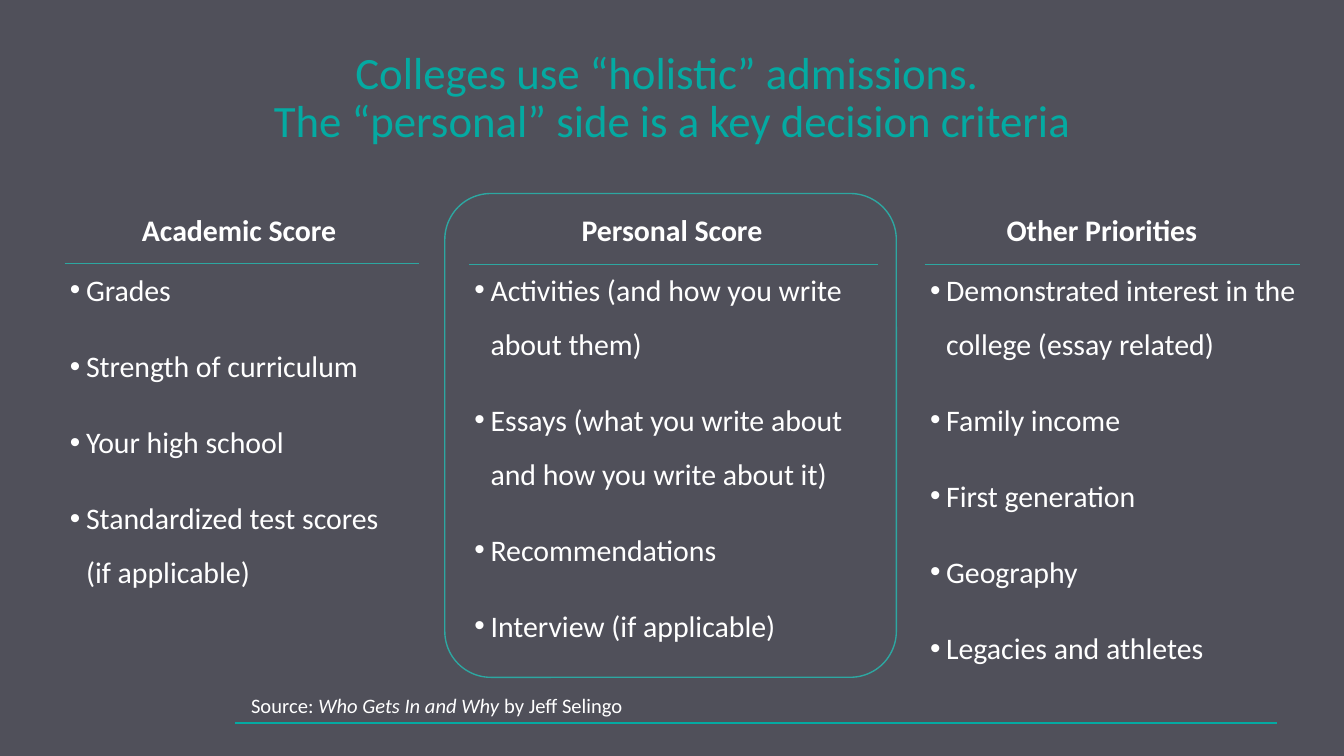
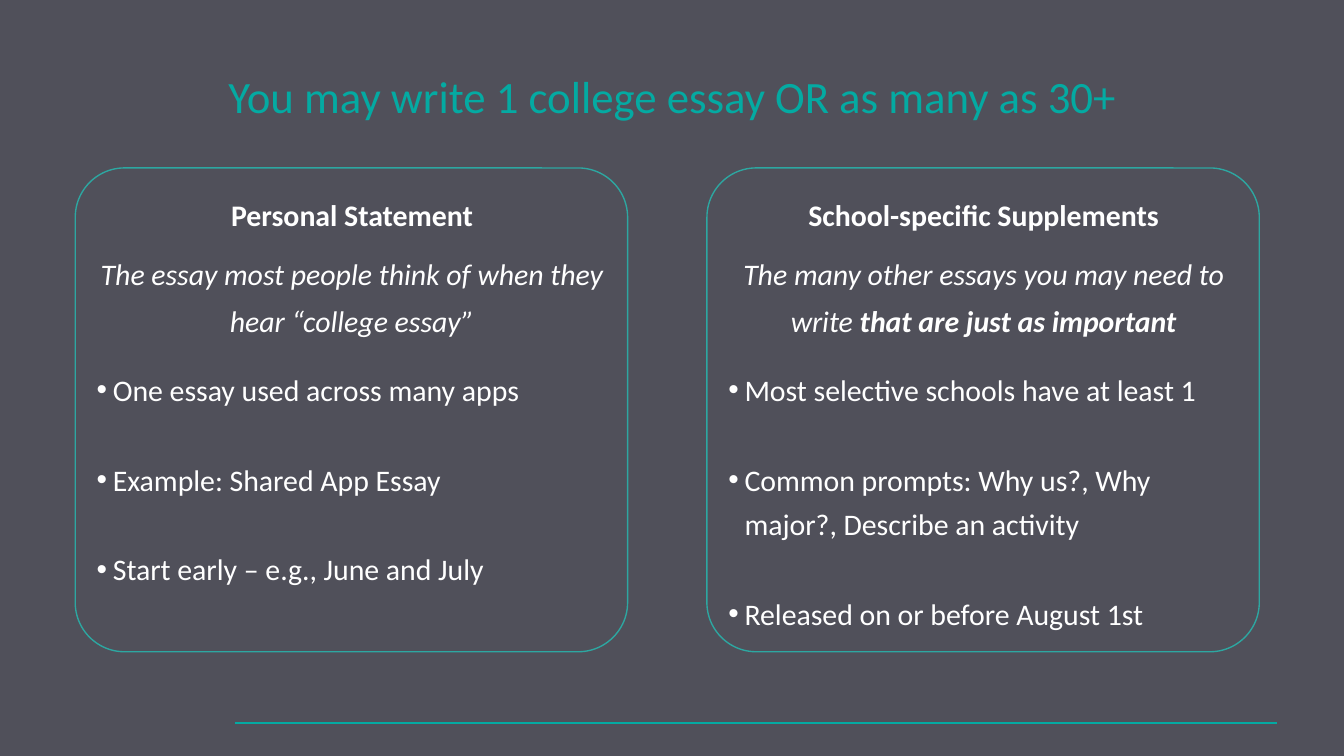
from lxml.etree import SubElement
from pptx import Presentation
from pptx.dml.color import RGBColor
from pptx.enum.shapes import MSO_CONNECTOR as Connector, MSO_SHAPE as Shape
from pptx.enum.text import MSO_ANCHOR as Anchor, MSO_AUTO_SIZE as AutoSize, PP_ALIGN as Align
from pptx.oxml.ns import qn
from pptx.util import Inches, Pt

COLORS = {"ground": "50505A", "title": "04AAA2", "accent": "2DA7A1", "text": "FFFFFF"}
FONT = "Calibri"
INDENT = 0.12

BODY = {"size": Pt(16)}
BOLD = {"size": Pt(16), "bold": True}
ITALIC = {"size": Pt(16), "italic": True}
BOLD_ITALIC = {"size": Pt(16), "bold": True, "italic": True}
SOURCE = {"size": Pt(11)}
SOURCE_ITALIC = {"size": Pt(11), "italic": True}

TITLE_PARA = {"alignment": Align.CENTER, "line_spacing": 0.9}
HEADING_PARA = {"alignment": Align.CENTER, "line_spacing": 1.5}
INTRO_PARA = {"alignment": Align.CENTER, "line_spacing": 1.3}
COLUMN_PARA = {"alignment": Align.LEFT, "line_spacing": 1.5}
CARD_PARA = {"alignment": Align.LEFT, "line_spacing": 1.25}


def rgb(name):
    return RGBColor.from_string(COLORS[name])


def apply(target, values):
    for name, value in values.items():
        setattr(target, name, value)


def style_span(span, values, color="text"):
    apply(span.font, {"name": FONT, **values})
    span.font.color.rgb = rgb(color)


def style_frame(frame, inset, anchor=Anchor.TOP):
    margins = {f"margin_{side}": Inches(inset) for side in ("left", "top", "right", "bottom")}
    apply(frame, {"word_wrap": True, "auto_size": AutoSize.NONE, "vertical_anchor": anchor, **margins})


def add_bullet(para):
    props = para._p.get_or_add_pPr()
    props.set("marL", str(Inches(INDENT)))
    props.set("indent", str(-Inches(INDENT)))
    color = SubElement(props, qn("a:buClr"))
    SubElement(color, qn("a:srgbClr"), val=COLORS["text"])
    SubElement(props, qn("a:buFont"), typeface="Arial")
    SubElement(props, qn("a:buChar"), char="•")


def add_text(page, box, paras, para_format, gap=0, inset=0.04, bullets=False):
    frame = page.shapes.add_textbox(*map(Inches, box)).text_frame
    style_frame(frame, inset)
    for index, spans in enumerate(paras):
        para = frame.add_paragraph() if index else frame.paragraphs[0]
        if bullets:
            add_bullet(para)
        apply(para, para_format)
        if index:
            para.space_before = Pt(gap)
        for text, values in spans:
            span = para.add_run()
            span.text = text
            style_span(span, values)


def add_list(page, box, items, para_format, gap, inset):
    add_text(page, box, [[(item, BODY)] for item in items], para_format, gap, inset, bullets=True)


def add_rule(page, left, top, width, color="accent"):
    rule = page.shapes.add_connector(
        Connector.STRAIGHT, *map(Inches, (left, top, left + width, top)))
    rule.line.color.rgb = rgb(color)
    rule.line.width = Pt(0.75)
    SubElement(rule._element.spPr, qn("a:effectLst"))


def add_frame(page, box):
    outline = page.shapes.add_shape(Shape.ROUNDED_RECTANGLE, *map(Inches, box))
    outline.adjustments[0] = 0.1 if box[2] < 3 else 0.102
    outline.shadow.inherit = False
    outline.fill.background()
    outline.line.color.rgb = rgb("accent")
    outline.line.width = Pt(0.75)


def add_page(deck, title, title_width):
    page = deck.slides.add_slide(deck.slide_layouts[5])
    holder = page.shapes.title
    left = (10 - title_width) / 2
    apply(holder, dict(zip(("left", "top", "width", "height"),
                           map(Inches, (left, 0.29, title_width, 0.89)))))
    style_frame(holder.text_frame, 0.04, Anchor.MIDDLE)
    para = holder.text_frame.paragraphs[0]
    para.text = title
    apply(para, TITLE_PARA)
    for span in para.runs:
        style_span(span, {"size": Pt(24), "bold": False}, "title")
    add_rule(page, 1.75, 5.38, 7.75, "title")
    return page


def add_column(page, box, heading, heading_offset, rule_offset, rule_width, items):
    left, top, width, height = box
    add_text(page, (left + heading_offset, top, 1.94, 0.39), [[(heading, BOLD)]], HEADING_PARA)
    add_list(page, (left, top + 0.45, width, height - 0.45), items, COLUMN_PARA, 12, 0.04)
    add_rule(page, left, top + rule_offset, rule_width)


def add_card(page, box, heading, intro, items):
    left, top, width, height = box
    add_frame(page, box)
    inner_left, inner_width = left + 0.14, width - 0.27
    add_text(page, (inner_left, top + 0.09, inner_width, 1.18),
             [[(heading, BOLD)], intro], INTRO_PARA, 7)
    add_list(page, (inner_left, top + 1.43, inner_width, height - 1.64), items, CARD_PARA, 24, 0.02)


def build_criteria(deck):
    page = add_page(
        deck,
        "Colleges use “holistic” admissions. \vThe “personal” side is a key decision criteria",
        6.88)
    columns = [
        ((0.48, 1.4, 2.61, 3.19), "Academic Score", 0.33, 0.56, 2.64,
         ["Grades", "Strength of curriculum", "Your high school",
          "Standardized test scores (if applicable)"]),
        ((3.49, 1.4, 3.02, 3.38), "Personal Score", 0.54, 0.57, 3.04,
         ["Activities (and how you write about them)",
          "Essays (what you write about and how you write about it)",
          "Recommendations", "Interview (if applicable)"]),
        ((6.88, 1.4, 2.81, 3.57), "Other Priorities", 0.35, 0.57, 2.79,
         ["Demonstrated interest in the college (essay related)", "Family income",
          "First generation", "Geography", "Legacies and athletes"]),
    ]
    for column in columns:
        add_column(page, *column)
    add_frame(page, (3.31, 1.44, 3.36, 3.6))
    source = [("Source: ", SOURCE), ("Who Gets In and Why ", SOURCE_ITALIC),
              ("by Jeff Selingo", SOURCE)]
    add_text(page, (1.77, 5.06, 8, 0.39), [source], {"alignment": Align.LEFT}, inset=0.1)


def build_essays(deck):
    page = add_page(deck, "You may write 1 college essay OR as many as 30+", 7.55)
    cards = [
        ("Personal Statement",
         [("The essay most people think of when they hear “college essay”", ITALIC)],
         ["One essay used across many apps", "Example: Shared App Essay",
          "Start early – e.g., June and July"]),
        ("School-specific Supplements",
         [("The many other essays you may need to write ", ITALIC),
          ("that are just as important", BOLD_ITALIC)],
         ["Most selective schools have at least 1",
          "Common prompts: Why us?, Why major?, Describe an activity",
          "Released on or before August 1st"]),
    ]
    for index, card in enumerate(cards):
        add_card(page, (0.56 + index * 4.7, 1.25, 4.11, 3.6), *card)


def main():
    deck = Presentation()
    deck.slide_width = Inches(10)
    deck.slide_height = deck.slide_width * 9 // 16
    ground = deck.slide_master.background.fill
    ground.solid()
    ground.fore_color.rgb = rgb("ground")
    build_criteria(deck)
    build_essays(deck)
    deck.save("out.pptx")


if __name__ == "__main__":
    main()
